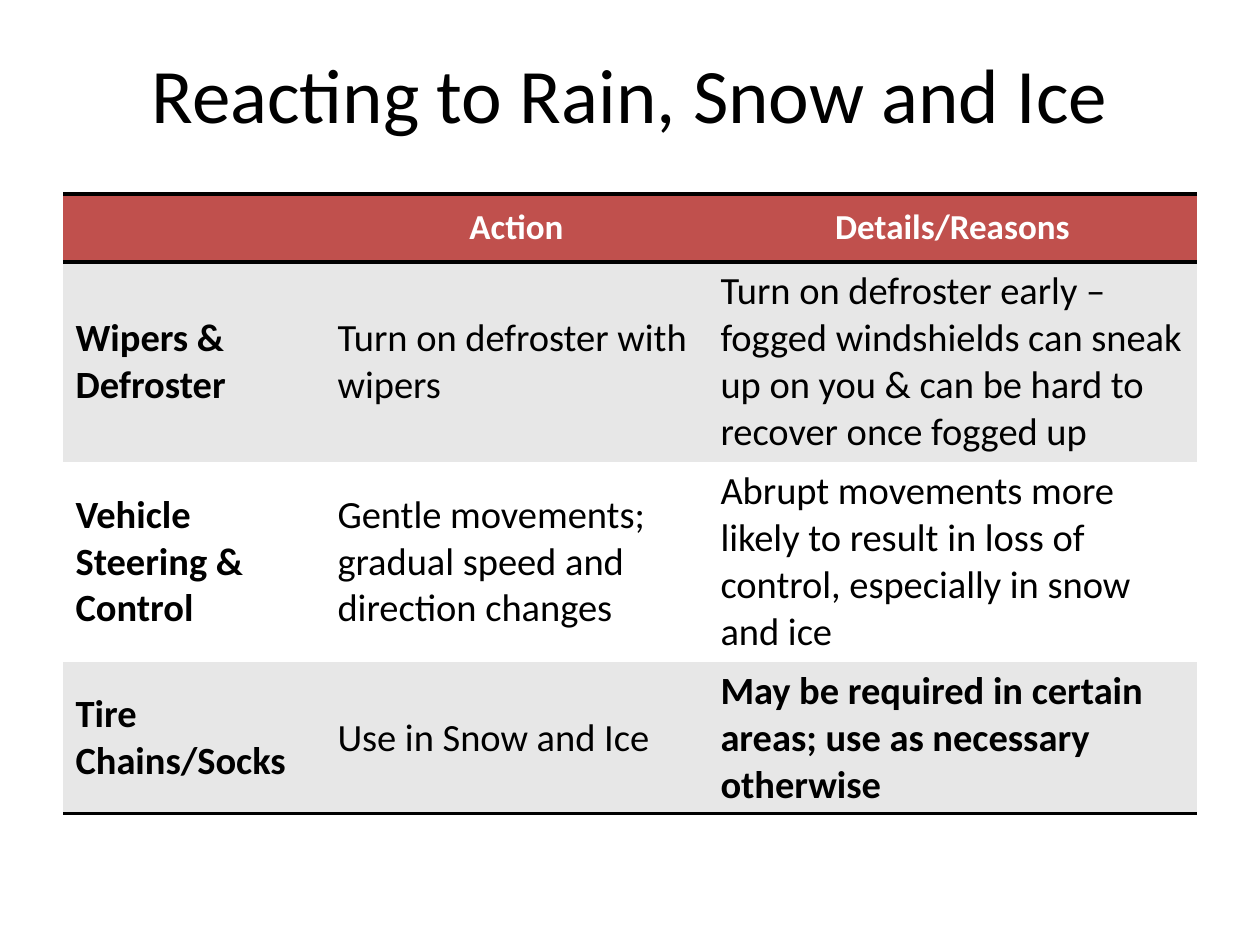
from dataclasses import dataclass

from lxml import etree
from pptx import Presentation
from pptx.dml.color import RGBColor
from pptx.enum import text
from pptx.oxml import ns
from pptx.util import Pt

EMU_PER_PX = 914400 / 126
FONT = "Calibri"
NO_STYLE = "{2D5ABB26-0587-4C30-8999-92F81FD0307C}"

BLACK = RGBColor(0x00, 0x00, 0x00)
WHITE = RGBColor(0xFF, 0xFF, 0xFF)
RED = RGBColor(0xC0, 0x50, 0x4D)
GREY = RGBColor(0xE7, 0xE7, 0xE7)

COLUMN_WIDTHS = (262, 383, 489)


@dataclass(frozen=True)
class Row:
    height: int
    words: tuple[str, str, str]
    fill: RGBColor
    bold: tuple[bool, bool, bool] = (True, False, False)
    size: int = 22
    color: RGBColor = BLACK
    align: text.PP_ALIGN = text.PP_ALIGN.LEFT
    rules: tuple[str, ...] = ()


ROWS = (
    Row(68, ("", "Action", "Details/Reasons"), RED, (True, True, True), 20, WHITE,
        text.PP_ALIGN.CENTER, ("lnT", "lnB")),
    Row(200, ("Wipers & Defroster", "Turn on defroster with wipers",
              "Turn on defroster early – fogged windshields can sneak up on you "
              "& can be hard to recover once fogged up"), GREY),
    Row(200, ("Vehicle Steering & Control",
              "Gentle movements; gradual speed and direction changes",
              "Abrupt movements more likely to result in loss of control, "
              "especially in snow and ice"), WHITE),
    Row(152, ("Tire Chains/Socks", "Use in Snow and Ice",
              "May be required in certain areas; use as necessary otherwise"),
        GREY, (True, False, True), rules=("lnB",)),
)


def px(length: int) -> int:
    return round(length * EMU_PER_PX)


def write(frame, words: str, size: int, color: RGBColor, bold: bool,
          align: text.PP_ALIGN) -> None:
    frame.text = words
    paragraph = frame.paragraphs[0]
    paragraph.alignment = align
    for run in paragraph.runs:
        run.font.name = FONT
        run.font.size = Pt(size)
        run.font.bold = bold
        run.font.color.rgb = color


def add_rule(cell, edge: str) -> None:
    """Draw a black 2 pt border on one edge; call before filling the cell."""
    properties = cell._tc.get_or_add_tcPr()
    line = etree.SubElement(properties, ns.qn(f"a:{edge}"), w=str(Pt(2)))
    solid = etree.SubElement(line, ns.qn("a:solidFill"))
    etree.SubElement(solid, ns.qn("a:srgbClr"), val=str(BLACK))


def fill_row(table, index: int, row: Row) -> None:
    table.rows[index].height = px(row.height)
    for cell, words, bold in zip(table.rows[index].cells, row.words, row.bold):
        for edge in row.rules:
            add_rule(cell, edge)
        cell.fill.solid()
        cell.fill.fore_color.rgb = row.fill
        cell.vertical_anchor = text.MSO_ANCHOR.MIDDLE
        write(cell.text_frame, words, row.size, row.color, bold, row.align)


def add_title(slide, words: str) -> None:
    title = slide.shapes.add_textbox(px(63), px(28), px(1134), px(130)).text_frame
    title.word_wrap = True
    title.vertical_anchor = text.MSO_ANCHOR.MIDDLE
    write(title, words, 44, BLACK, False, text.PP_ALIGN.CENTER)


def add_reactions(slide) -> None:
    table = slide.shapes.add_table(
        len(ROWS), len(COLUMN_WIDTHS), px(63), px(194),
        px(sum(COLUMN_WIDTHS)), px(sum(row.height for row in ROWS))).table
    table.horz_banding = False
    table._tbl.tblPr.find(ns.qn("a:tableStyleId")).text = NO_STYLE
    for column, width in zip(table.columns, COLUMN_WIDTHS):
        column.width = px(width)
    for index, row in enumerate(ROWS):
        fill_row(table, index, row)


def main() -> None:
    deck = Presentation()
    deck.slide_width, deck.slide_height = px(1260), px(945)
    slide = deck.slides.add_slide(deck.slide_layouts[6])
    add_title(slide, "Reacting to Rain, Snow and Ice")
    add_reactions(slide)
    deck.save("out.pptx")


if __name__ == "__main__":
    main()
